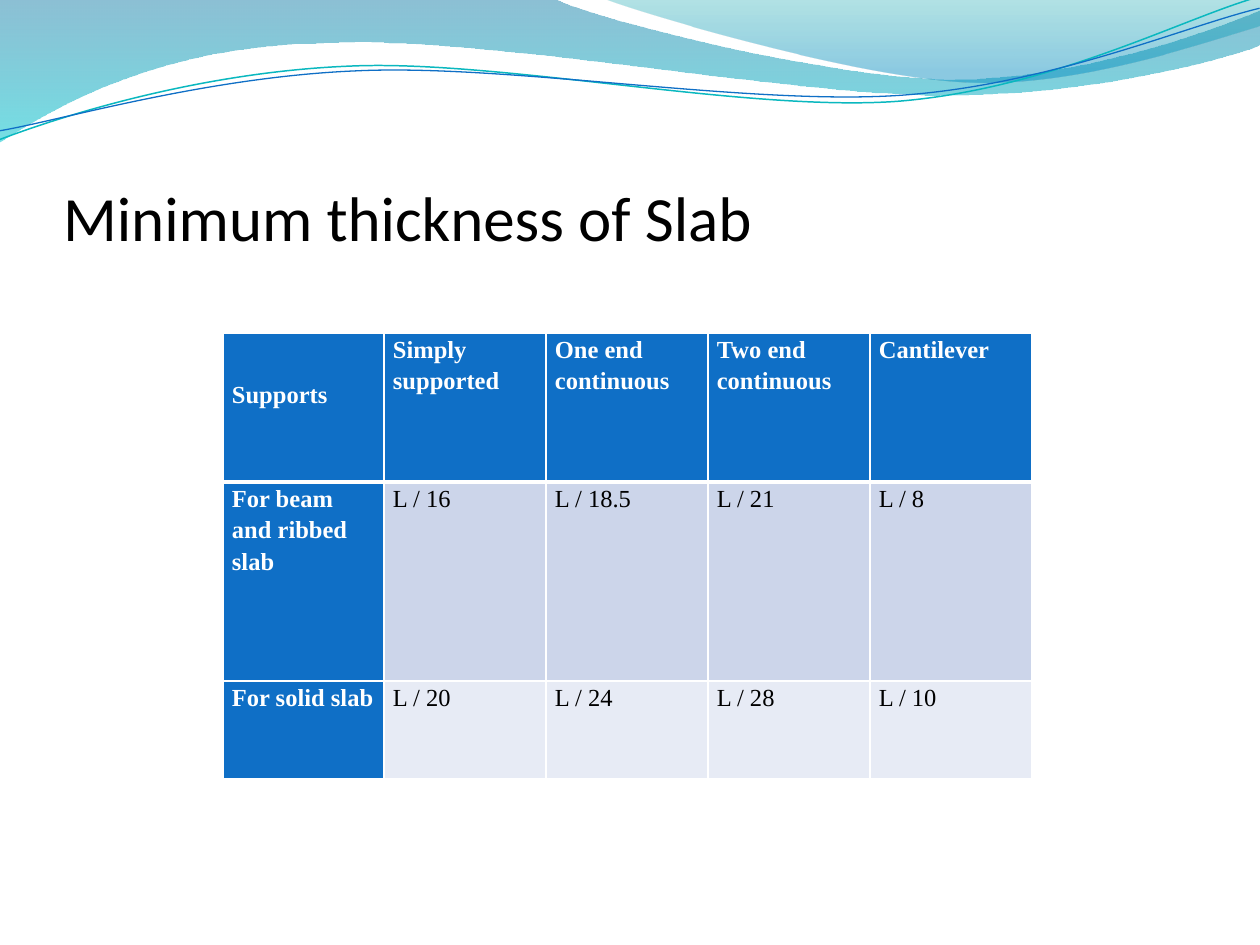
from dataclasses import dataclass
from typing import NamedTuple

from lxml.etree import SubElement
from pptx import Presentation
from pptx.dml.color import RGBColor
from pptx.enum.text import MSO_ANCHOR as Anchor, PP_ALIGN as Align
from pptx.oxml.ns import qn
from pptx.util import Emu, Pt


class Box(NamedTuple):
    left: int
    top: int
    width: int
    height: int


@dataclass(frozen=True)
class Theme:
    title_font: str = "Calibri"
    table_font: str = "Times New Roman"
    title_size: int = 36
    table_size: int = 14
    ink: str = "000000"
    white: str = "FFFFFF"
    accent: str = "0F6FC6"
    teal: str = "0AB8BF"
    bands: tuple = ("CCD5EA", "E7EBF5")
    broad_wave: tuple = ((0, "0074A1", 45), (1, "00C6CF", 55))
    corner_wave: tuple = ((0, "00A1A9", 30), (0.8, "008BBF", 45))


THEME = Theme()
PAGE = Box(0, 0, 1260, 945)
LINE_TILT = 357.3

BROAD_WAVE = [
    [(0, 0)], [(554, -1)],
    [(600, 21), (837, 79), (955, 79)], [(1074, 79), (1207, 33), (1260, 11)],
    [(1261, 45)],
    [(1239, 55), (1096, 96), (940, 95)], [(784, 95), (481, 35), (324, 43)],
    [(163, 45), (58, 105), (-1, 142)], [(0, 0)],
]
CORNER_WAVE = [
    [(604, -1)],
    [(641, 14), (859, 78), (969, 82)], [(1079, 87), (1211, 40), (1260, 26)],
    [(1260, 0)], [(604, -1)],
]
TEAL_LINE = [
    [(-3, 110)], [(58, 90), (199, 52), (350, 53)],
    [(499, 53), (745, 118), (896, 114)], [(1049, 109), (1184, 45), (1260, 27)],
]
BLUE_LINE = [
    [(-2, 101)], [(57, 94), (207, 57), (357, 58)],
    [(509, 58), (750, 112), (902, 108)], [(1052, 104), (1188, 52), (1262, 38)],
]

ROWS = [
    ["Supports", "Simply supported", "One end continuous", "Two end continuous", "Cantilever"],
    ["For beam and ribbed slab", "L / 16", "L / 18.5", "L / 21", "L / 8"],
    ["For solid slab", "L / 20", "L / 24", "L / 28", "L / 10"],
]
ROW_HEIGHTS = [149, 199, 98]
COLUMN_WIDTHS = [161] + [162] * 4


def px(length):
    return Emu(round(length * 914400 / 126))


def rgb(value):
    return RGBColor.from_string(value)


def bend(shape, segments):
    outline = next(shape.element.iter(qn("a:path")))
    steps = iter(outline.findall(qn("a:lnTo")))
    for segment in segments[1:]:
        lines = [next(steps) for _ in segment]
        if len(segment) == 3:
            curve = SubElement(outline, qn("a:cubicBezTo"))
            lines[0].addprevious(curve)
            for line in lines:
                curve.append(line[0])
                outline.remove(line)


def add_outline(shapes, box, segments, close):
    points = [(px(box.left + x), px(box.top + y)) for segment in segments for x, y in segment]
    builder = shapes.build_freeform(*points[0])
    builder.add_line_segments(points[1:], close=close)
    shape = builder.convert_to_shape()
    shape.shadow.inherit = False
    bend(shape, segments)
    return shape


def add_wave(shapes, box, segments, stops):
    wave = add_outline(shapes, box, segments, True)
    wave.line.fill.background()
    wave.fill.gradient()
    wave.fill.gradient_angle = 270
    for stop, (position, color, opacity) in zip(wave.fill.gradient_stops, stops):
        stop.position = position
        stop.color.rgb = rgb(color)
    for color, stop in zip(wave.element.spPr.iter(qn("a:srgbClr")), stops):
        SubElement(color, qn("a:alpha"), val=str(stop[2] * 1000))


def add_wave_line(shapes, box, segments, color, weight):
    line = add_outline(shapes, box, segments, False)
    line.rotation = LINE_TILT
    line.fill.background()
    line.line.color.rgb = rgb(color)
    line.line.width = Pt(weight)


def add_header_waves(page, box):
    add_wave(page.shapes, box, BROAD_WAVE, THEME.broad_wave)
    add_wave(page.shapes, box, CORNER_WAVE, THEME.corner_wave)
    lines = page.shapes.add_group_shape().shapes
    add_wave_line(lines, box, TEAL_LINE, THEME.teal, 0.85)
    add_wave_line(lines, box, BLUE_LINE, THEME.accent, 0.75)


def place_title(page, box, text):
    title = page.shapes.title
    title.left, title.top, title.width, title.height = map(px, box)
    frame = title.text_frame
    frame.text = text
    frame.word_wrap = True
    frame.vertical_anchor = Anchor.BOTTOM
    frame.margin_left = frame.margin_right = frame.margin_bottom = 0
    frame.margin_top = px(6)
    para = frame.paragraphs[0]
    para.alignment = Align.LEFT
    para.font.name = THEME.title_font
    para.font.size = Pt(THEME.title_size)
    para.font.color.rgb = rgb(THEME.ink)


def set_borders(cell, bottom):
    properties = cell._tc.get_or_add_tcPr()
    weights = {"a:lnL": 1, "a:lnR": 1, "a:lnT": 1, "a:lnB": bottom}
    for index, (tag, weight) in enumerate(weights.items()):
        border = SubElement(properties, qn(tag), w=str(Pt(weight)))
        fill = SubElement(border, qn("a:solidFill"))
        SubElement(fill, qn("a:srgbClr"), val=THEME.white)
        properties.insert(index, border)


def fill_cell(cell, text, row, column):
    heading = row == 0 or column == 0
    cell.text = text
    cell.margin_left, cell.margin_right = px(9), px(10)
    cell.margin_top = px(45) if row == column == 0 else 0
    cell.margin_bottom = 0
    cell.fill.solid()
    cell.fill.fore_color.rgb = rgb(THEME.accent if heading else THEME.bands[row - 1])
    set_borders(cell, 3 if row == 0 else 1)
    para = cell.text_frame.paragraphs[0]
    para.line_spacing = 1.15
    para.space_after = Pt(10)
    para.font.name = THEME.table_font
    para.font.size = Pt(THEME.table_size)
    para.font.bold = heading
    para.font.color.rgb = rgb(THEME.white if heading else THEME.ink)


def add_thickness_table(page, box):
    table = page.shapes.add_table(len(ROWS), len(ROWS[0]), *map(px, box)).table
    table.horz_banding = False
    for column, width in zip(table.columns, COLUMN_WIDTHS):
        column.width = px(width)
    for row, (texts, height) in enumerate(zip(ROWS, ROW_HEIGHTS)):
        table.rows[row].height = px(height)
        for column, text in enumerate(texts):
            fill_cell(table.cell(row, column), text, row, column)


def main():
    deck = Presentation()
    deck.slide_width, deck.slide_height = px(PAGE.width), px(PAGE.height)
    page = deck.slides.add_slide(deck.slide_layouts[5])
    add_header_waves(page, Box(0, 0, PAGE.width, 142))
    place_title(page, Box(63, 97, 1134, 157), "Minimum thickness of Slab")
    add_thickness_table(page, Box(223, 333, sum(COLUMN_WIDTHS), sum(ROW_HEIGHTS)))
    deck.save("out.pptx")


if __name__ == "__main__":
    main()
